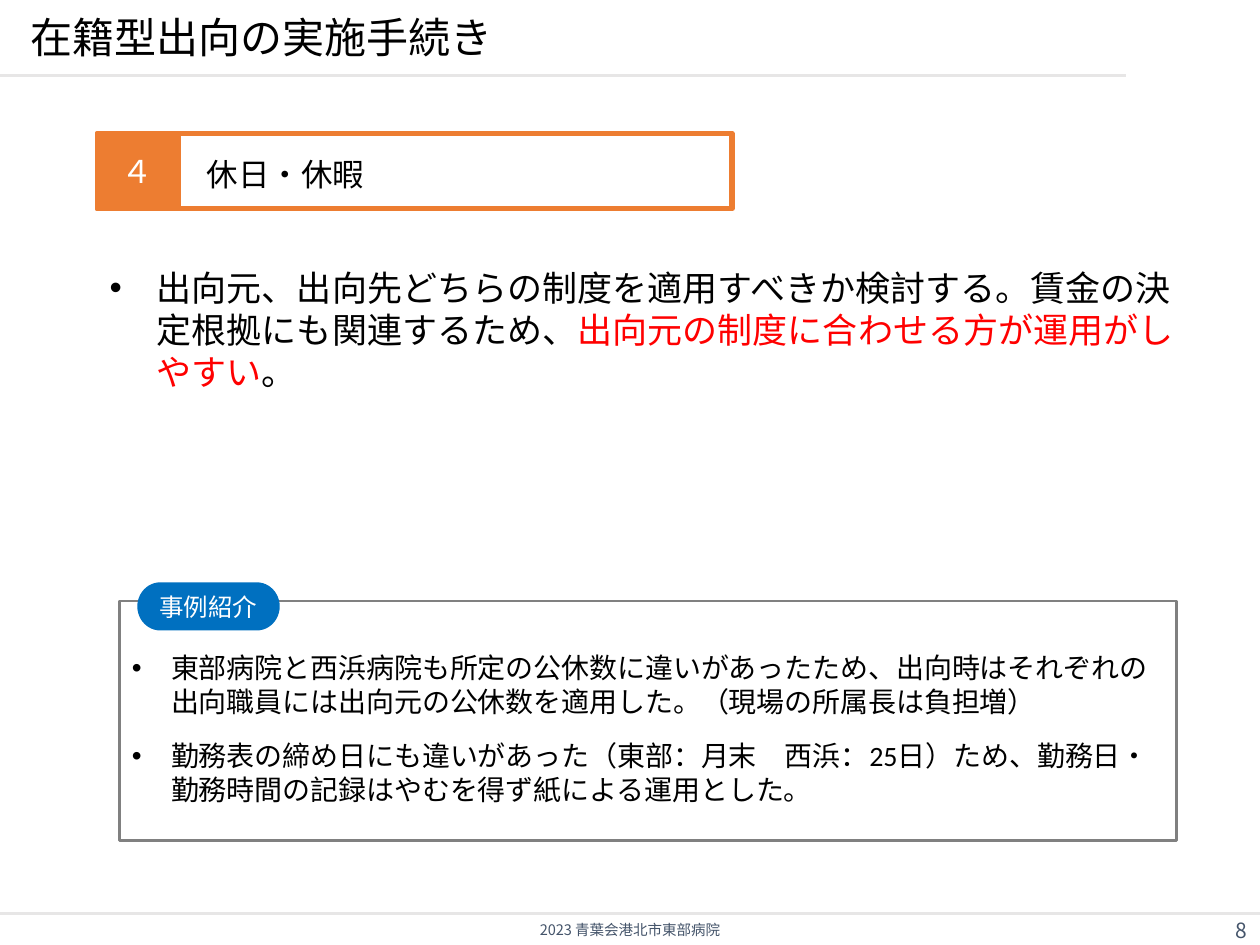
from lxml.etree import SubElement
from pptx import Presentation
from pptx.dml.color import RGBColor
from pptx.enum.shapes import MSO_CONNECTOR, MSO_SHAPE
from pptx.enum.text import MSO_ANCHOR as ANCHOR, MSO_AUTO_SIZE, PP_ALIGN as ALIGN
from pptx.oxml.ns import qn
from pptx.util import Cm, Pt

COLORS = {
    "black": "000000", "white": "FFFFFF", "red": "FF0000", "orange": "ED7D31",
    "blue": "0070C0", "gray": "808080", "rule": "E7E6E6", "slate": "44546A",
}
GOTHIC = "Noto Sans CJK JP"
LATIN = "Calibri"
WIDTH, HEIGHT = 25.4, 19.05


def color(name):
    return RGBColor.from_string(COLORS[name])


def place(shape, box):
    for name, value in zip(("left", "top", "width", "height"), box):
        setattr(shape, name, Cm(value))


def format_frame(shape, insets, anchor, wrap=True):
    frame = shape.text_frame
    values = {"auto_size": MSO_AUTO_SIZE.NONE, "word_wrap": wrap, "vertical_anchor": anchor}
    for side, inset in zip(("left", "top", "right", "bottom"), insets):
        values["margin_" + side] = Cm(inset)
    for name, value in values.items():
        setattr(frame, name, value)
    return frame


def write_runs(paragraph, runs, size, font, align=ALIGN.LEFT, after=0):
    values = {"alignment": align, "space_before": Pt(0), "space_after": Pt(after)}
    for name, value in values.items():
        setattr(paragraph, name, value)
    for text, tint in runs:
        run = paragraph.add_run()
        run.text = text
        for name, value in {"name": font, "size": Pt(size), "bold": False}.items():
            setattr(run.font, name, value)
        run.font.color.rgb = color(tint)
        SubElement(run.font._element, qn("a:ea")).set("typeface", font)


def write_bullets(frame, items, size, indent, after=0):
    for index, runs in enumerate(items):
        paragraph = frame.add_paragraph() if index else frame.paragraphs[0]
        properties = paragraph._p.get_or_add_pPr()
        properties.set("marL", str(Cm(indent)))
        properties.set("indent", str(-Cm(indent)))
        SubElement(properties, qn("a:buFont")).set("typeface", "Arial")
        SubElement(properties, qn("a:buChar")).set("char", "•")
        write_runs(paragraph, runs, size, LATIN, after=after)


def add_box(slide, kind, box, fill, line=None, weight=0):
    shape = slide.shapes.add_shape(kind, *map(Cm, box))
    shape.shadow.inherit = False
    shape.fill.solid()
    shape.fill.fore_color.rgb = color(fill)
    if line:
        shape.line.color.rgb = color(line)
        shape.line.width = Pt(weight)
    else:
        shape.line.fill.background()
    return shape


def add_rule(slide, y, width):
    rule = slide.shapes.add_connector(MSO_CONNECTOR.STRAIGHT, 0, Cm(y), Cm(width), Cm(y))
    rule.line.color.rgb = color("rule")
    rule.line.width = Pt(1.5)
    SubElement(rule._element.spPr, qn("a:effectLst"))


def add_label(slide, box, text, size, align):
    label = slide.shapes.add_textbox(*map(Cm, box))
    frame = format_frame(label, (0.25, 0.13, 0.25, 0.13), ANCHOR.MIDDLE)
    write_runs(frame.paragraphs[0], [(text, "slate")], size, GOTHIC, align)


def fill_title(slide, box, text):
    title = slide.shapes.title
    place(title, box)
    frame = format_frame(title, (0.25, 0.13, 0.25, 0), ANCHOR.BOTTOM, wrap=False)
    write_runs(frame.paragraphs[0], [(text, "black")], 24, GOTHIC)
    add_rule(slide, 1.52, 22.7)


def add_footer(slide, box, text, number):
    left, top, width, height = box
    add_rule(slide, top - 0.02, width)
    add_label(slide, box, text, 8.3, ALIGN.CENTER)
    number_width = 5.28
    add_label(slide, (left + width - number_width, top, number_width, 0.64),
              number, 12, ALIGN.RIGHT)


def add_heading(slide, box, number, text):
    left, top, width, height = box
    number_width = 1.63
    heading = add_box(slide, MSO_SHAPE.RECTANGLE, box, "white", "orange", 3)
    frame = format_frame(heading, (2.21, 0.13, 0.25, 0), ANCHOR.MIDDLE)
    write_runs(frame.paragraphs[0], [(text, "black")], 18, GOTHIC)
    tile = add_box(slide, MSO_SHAPE.RECTANGLE, (left, top, number_width, height),
                   "orange", "orange", 3)
    frame = format_frame(tile, (0.1,) * 4, ANCHOR.MIDDLE)
    write_runs(frame.paragraphs[0], [(number, "white")], 18, GOTHIC, ALIGN.CENTER)


def fill_body(slide, box, items):
    body = slide.placeholders[1]
    place(body, box)
    frame = format_frame(body, (0.25, 0, 0.25, 0), ANCHOR.TOP)
    write_bullets(frame, items, 20, 0.95)


def add_case(slide, box, badge_text, items):
    left, top, width, height = box
    panel = add_box(slide, MSO_SHAPE.RECTANGLE, box, "white", "gray", 1.5)
    frame = format_frame(panel, (0.25, 1, 0.25, 0), ANCHOR.TOP)
    write_bullets(frame, items, 16, 0.79, after=12)
    badge = add_box(slide, MSO_SHAPE.FLOWCHART_TERMINATOR,
                    (left + 0.36, top - 0.38, 2.87, 0.97), "blue")
    frame = format_frame(badge, (0,) * 4, ANCHOR.MIDDLE)
    write_runs(frame.paragraphs[0], [(badge_text, "white")], 14, GOTHIC, ALIGN.CENTER)


def main():
    presentation = Presentation()
    presentation.slide_width, presentation.slide_height = Cm(WIDTH), Cm(HEIGHT)
    slide = presentation.slides.add_slide(presentation.slide_layouts[1])
    fill_title(slide, (0.36, 0.28, 20.42, 0.97), "在籍型出向の実施手続き")
    add_footer(slide, (0, 18.44, WIDTH, 0.74 - 0.13), "2023 青葉会港北市東部病院", "8")
    add_heading(slide, (1.96, 2.69, 12.8, 1.52), "４", "休日・休暇")
    fill_body(slide, (1.96, 5.38, 22.12, 2.57), [[
        ("出向元、出向先どちらの制度を適用すべきか検討する。賃金の決定根拠にも関連するため、", "black"),
        ("出向元の制度に合わせる方が運用がしやすい", "red"),
        ("。", "black"),
    ]])
    add_case(slide, (2.41, 12.12, 21.31, 4.83), "事例紹介", [
        [("東部病院と西浜病院も所定の公休数に違いがあったため、出向時はそれぞれの"
          "出向職員には出向元の公休数を適用した。（現場の所属長は負担増）", "black")],
        [("勤務表の締め日にも違いがあった（東部：月末　西浜：25日）ため、勤務日・"
          "勤務時間の記録はやむを得ず紙による運用とした。", "black")],
    ])
    presentation.save("out.pptx")


if __name__ == "__main__":
    main()
